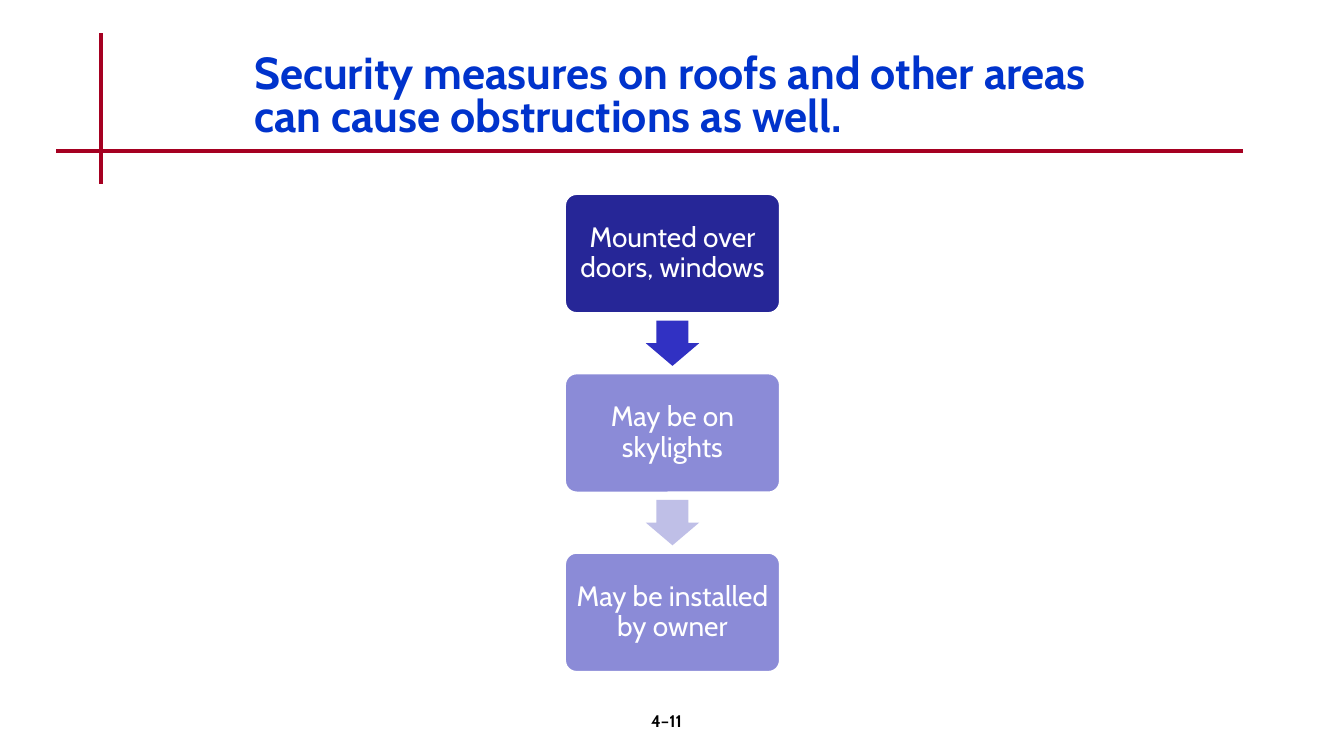
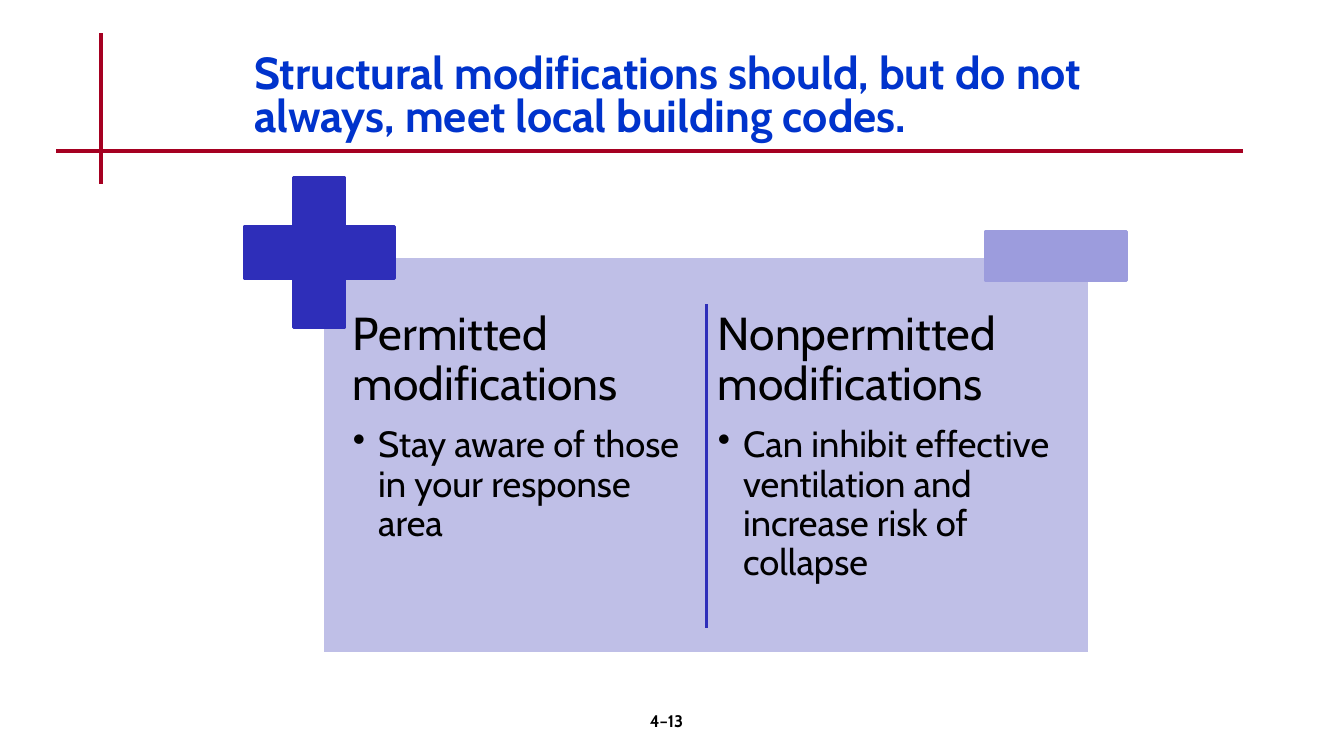
from dataclasses import dataclass

from lxml.etree import SubElement
from pptx import Presentation
from pptx.dml.color import RGBColor
from pptx.enum.shapes import MSO_CONNECTOR, MSO_SHAPE
from pptx.enum.text import MSO_ANCHOR, MSO_AUTO_SIZE, PP_ALIGN
from pptx.oxml.ns import qn
from pptx.util import Inches, Pt


@dataclass(frozen=True)
class Theme:
    """Hold the colours, font and type sizes of the presentation."""

    font: str = "Cabin"
    title: str = "0033CC"
    rule: str = "A50021"
    black: str = "000000"
    white: str = "FFFFFF"
    navy: str = "262697"
    arrow: str = "3131C3"
    accent: str = "2E2EB9"
    violet: str = "8B8BD7"
    lilac: str = "9C9CDD"
    pale: str = "BFBFE7"
    title_size: int = 32
    heading_size: int = 33
    bullet_size: int = 26
    step_size: int = 20
    footer_size: int = 12


THEME = Theme()


def write_text(paragraph, text, size, color=THEME.black, bold=False,
               align=PP_ALIGN.LEFT, line_spacing=None, space_after=0,
               bullet=False):
    """Write text into a paragraph with the given format."""
    paragraph.alignment = align
    paragraph.line_spacing = line_spacing
    paragraph.space_before = Pt(0)
    paragraph.space_after = Pt(space_after)
    if bullet:
        properties = paragraph._p.get_or_add_pPr()
        properties.set("marL", str(Inches(0.25)))
        properties.set("indent", str(Inches(-0.25)))
        SubElement(properties, qn("a:buChar")).set("char", "•")
    run = paragraph.add_run()
    run.text = text
    run.font.name = THEME.font
    run.font.size = Pt(size)
    run.font.bold = bold
    run.font.color.rgb = RGBColor.from_string(color)


class Deck:
    """Build slides in one style, keeping track of the current slide."""

    def __init__(self):
        """Start an empty widescreen presentation."""
        self.presentation = Presentation()
        self.presentation.slide_width = Inches(13.33)
        self.presentation.slide_height = Inches(7.5)
        self.slide = None

    def add_slide(self, title, number):
        """Add a slide with its crossed rules, title and page number."""
        layout = self.presentation.slide_layouts.get_by_name("Title Only")
        self.slide = self.presentation.slides.add_slide(layout)
        self.add_line(1, 0.33, 1, 1.83, THEME.rule, 3)
        self.add_line(0.56, 1.5, 12.33, 1.5, THEME.rule, 3)
        placeholder = self.slide.shapes.title
        placeholder.left, placeholder.top = Inches(2.42), Inches(0.5)
        placeholder.width, placeholder.height = Inches(9.08), Inches(0.92)
        frame = placeholder.text_frame
        frame.auto_size = MSO_AUTO_SIZE.NONE
        frame.vertical_anchor = MSO_ANCHOR.TOP
        write_text(frame.paragraphs[0], title, THEME.title_size, THEME.title,
                   bold=True, line_spacing=0.8)
        footer = self.add_text_frame(5.22, 7, 2.78, 0.5)
        write_text(footer.paragraphs[0], number, THEME.footer_size, bold=True,
                   align=PP_ALIGN.CENTER)

    def add_line(self, start_x, start_y, end_x, end_y, color, width):
        """Draw a straight line without a shadow."""
        line = self.slide.shapes.add_connector(
            MSO_CONNECTOR.STRAIGHT, Inches(start_x), Inches(start_y),
            Inches(end_x), Inches(end_y))
        line.line.color.rgb = RGBColor.from_string(color)
        line.line.width = Pt(width)
        SubElement(line._element.spPr, qn("a:effectLst"))

    def add_shape(self, kind, left, top, width, height, fill, outline=None,
                  adjustments=()):
        """Draw a filled preset shape and return it."""
        shape = self.slide.shapes.add_shape(
            kind, Inches(left), Inches(top), Inches(width), Inches(height))
        shape.shadow.inherit = False
        shape.fill.solid()
        shape.fill.fore_color.rgb = RGBColor.from_string(fill)
        if outline:
            shape.line.color.rgb = RGBColor.from_string(outline)
            shape.line.width = Pt(2)
        else:
            shape.line.fill.background()
        for index, value in enumerate(adjustments):
            shape.adjustments[index] = value
        return shape

    def set_margins(self, frame, margin):
        """Give a text frame equal margins on all sides."""
        frame.margin_left = frame.margin_right = Inches(margin)
        frame.margin_top = frame.margin_bottom = Inches(margin)

    def add_text_frame(self, left, top, width, height):
        """Add a wrapping text box and return its frame."""
        box = self.slide.shapes.add_textbox(
            Inches(left), Inches(top), Inches(width), Inches(height))
        box.text_frame.word_wrap = True
        return box.text_frame

    def add_step(self, text, left, top, width, height, fill):
        """Draw one rounded step with centred text."""
        step = self.add_shape(MSO_SHAPE.ROUNDED_RECTANGLE, left, top, width,
                              height, fill, THEME.white, [0.1])
        frame = step.text_frame
        frame.word_wrap = True
        frame.vertical_anchor = MSO_ANCHOR.MIDDLE
        self.set_margins(frame, 0.07)
        write_text(frame.paragraphs[0], text, THEME.step_size, THEME.white,
                   align=PP_ALIGN.CENTER, line_spacing=0.9)

    def add_flow(self, steps, arrow_fills):
        """Stack steps downwards with an arrow in each gap."""
        center, top, pitch = 6.67, 1.92, 1.78
        width, height = 2.14, 1.19
        arrow_width, arrow_height = 0.53, 0.45
        gap = (pitch - height - arrow_height) / 2
        for index, (text, fill) in enumerate(steps):
            self.add_step(text, center - width / 2, top + index * pitch,
                          width, height, fill)
        for index, fill in enumerate(arrow_fills):
            self.add_shape(MSO_SHAPE.DOWN_ARROW, center - arrow_width / 2,
                           top + index * pitch + height + gap,
                           arrow_width, arrow_height, fill,
                           adjustments=[0.6, 0.5])

    def add_column(self, left, heading, bullet):
        """Write a heading with one bullet below it."""
        frame = self.add_text_frame(left, 3.01, 3.54, 3.37)
        self.set_margins(frame, 0.07)
        write_text(frame.paragraphs[0], heading, THEME.heading_size,
                   line_spacing=0.9, space_after=11.5)
        paragraph = frame.add_paragraph()
        paragraph.level = 1
        write_text(paragraph, bullet, THEME.bullet_size, line_spacing=0.9,
                   bullet=True)

    def add_comparison(self, columns):
        """Draw the plus and minus panel with its columns."""
        self.add_shape(MSO_SHAPE.RECTANGLE, 3.2, 2.55, 7.61, 3.93,
                       THEME.pale, THEME.white)
        for index, (heading, bullet) in enumerate(columns):
            self.add_column(3.43 + index * 3.62, heading, bullet)
        self.add_shape(MSO_SHAPE.CROSS, 2.42, 1.76, 1.49, 1.49,
                       THEME.accent, THEME.accent, [0.328])
        self.add_shape(MSO_SHAPE.RECTANGLE, 9.77, 2.3, 1.4, 0.48,
                       THEME.lilac, THEME.lilac)
        self.add_line(7.01, 3.02, 7.01, 6.23, THEME.accent, 2)


def main():
    """Build and save both slides."""
    deck = Deck()
    deck.add_slide("Security measures on roofs and other areas can cause "
                   "obstructions as well.", "4–11")
    deck.add_flow([("Mounted over doors, windows", THEME.navy),
                   ("May be on skylights", THEME.violet),
                   ("May be installed by owner", THEME.violet)],
                  [THEME.arrow, THEME.pale])
    deck.add_slide("Structural modifications should, but do not always, "
                   "meet local building codes.", "4–13")
    deck.add_comparison([
        ("Permitted modifications",
         "Stay aware of those in your response area"),
        ("Nonpermitted modifications",
         "Can inhibit effective ventilation and increase risk of collapse"),
    ])
    deck.presentation.save("out.pptx")


if __name__ == "__main__":
    main()
